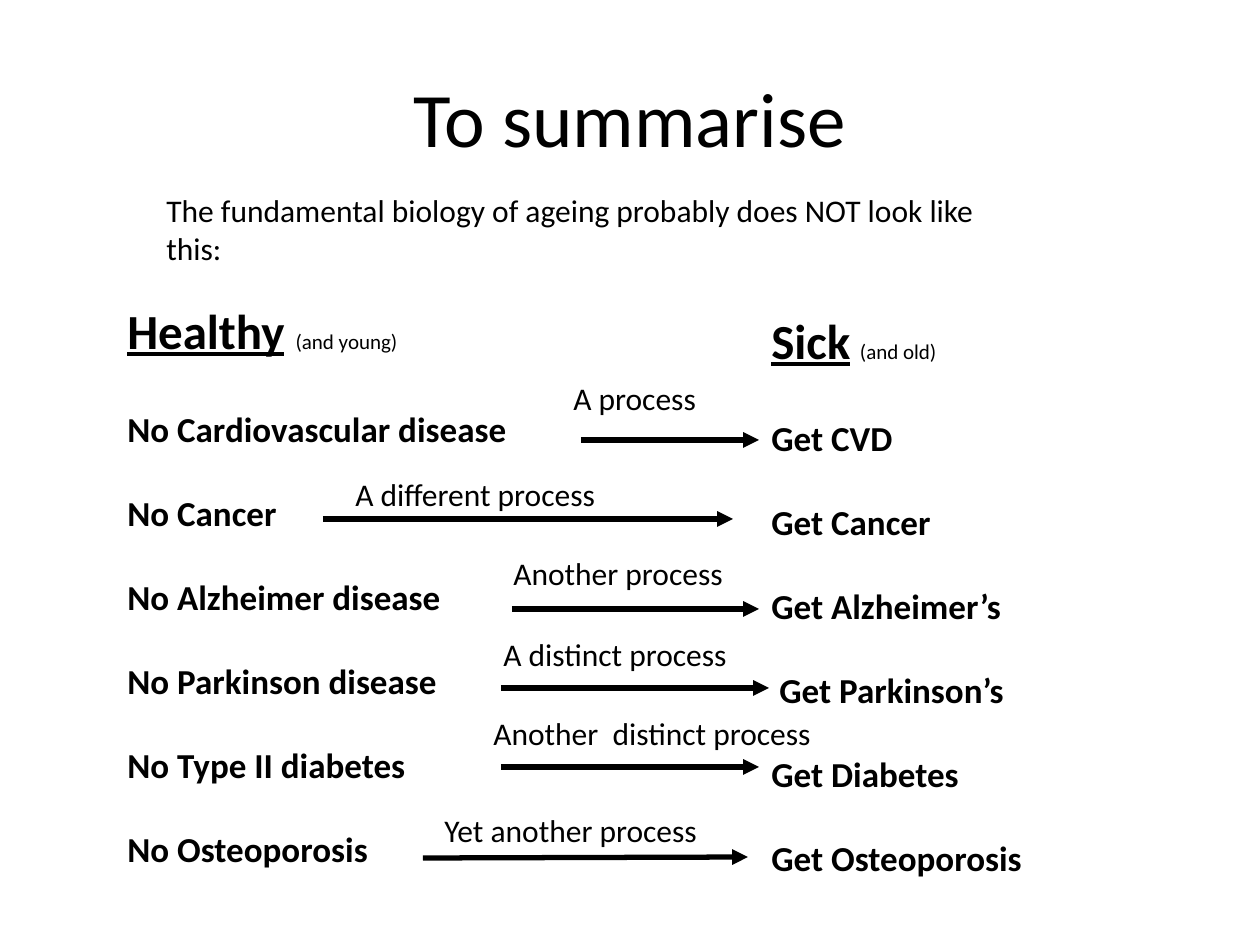
from dataclasses import dataclass

from lxml.etree import SubElement
from pptx import Presentation
from pptx.dml.color import RGBColor
from pptx.enum.shapes import MSO_CONNECTOR
from pptx.enum.text import MSO_ANCHOR, PP_ALIGN
from pptx.oxml.ns import qn
from pptx.util import Pt

EMU_PER_PX = 914400 / 126


@dataclass(frozen=True)
class Theme:
    font: str = "Calibri"
    ink: RGBColor = RGBColor(0, 0, 0)
    title: int = 44
    heading: int = 28
    gap: int = 24
    item: int = 20
    body: int = 18
    aside: int = 12
    arrow: int = 3


THEME = Theme()

# Healthy state, sick state
STATES = [
    ("No Cardiovascular disease", "Get CVD"),
    ("No Cancer", "Get Cancer"),
    ("No Alzheimer disease", "Get Alzheimer’s"),
    ("No Parkinson disease", " Get Parkinson’s"),
    ("No Type II diabetes", "Get Diabetes"),
    ("No Osteoporosis", "Get Osteoporosis"),
]

# Label, its left, top and width, then the arrow's start and end
PROCESSES = [
    ("A process", 561, 373, 189, (581, 440), (759, 440)),
    ("A different process", 343, 469, 367, (323, 519), (733, 519)),
    ("Another process", 501, 548, 287, (512, 609), (759, 609)),
    ("A distinct process", 491, 629, 328, (501, 688), (769, 688)),
    ("Another  distinct process", 481, 708, 417, (501, 767), (759, 767)),
    ("Yet another process", 432, 805, 397, (423, 858), (748, 857)),
]


def px(value):
    return round(value * EMU_PER_PX)


def format_span(span, size, bold=False, underline=False):
    font = span.font
    font.name, font.size, font.color.rgb = THEME.font, Pt(size), THEME.ink
    font.bold, font.underline = bold, underline


def add_text(page, left, top, width, height, text, size, bold=False):
    """Add a wrapped text box; each line of text becomes a paragraph."""
    box = page.shapes.add_textbox(px(left), px(top), px(width), px(height))
    frame = box.text_frame
    frame.word_wrap = True
    frame.text = text
    for para in frame.paragraphs:
        for span in para.runs:
            format_span(span, size, bold)
    return frame


def add_title(page, text):
    frame = add_text(page, 63, 38, 1134, 158, text, THEME.title)
    frame.vertical_anchor = MSO_ANCHOR.MIDDLE
    frame.paragraphs[0].alignment = PP_ALIGN.CENTER


def add_heading(page, left, top, width, word, aside, gap_size):
    frame = add_text(page, left, top, width, 72, word, THEME.heading)
    para = frame.paragraphs[0]
    format_span(para.runs[0], THEME.heading, bold=True, underline=True)
    for text, size in ((" ", gap_size), (aside, THEME.aside)):
        span = para.add_run()
        span.text = text
        format_span(span, size)


def add_state_list(page, left, top, width, states):
    frame = add_text(page, left, top, width, 479, "\n".join(states), THEME.item, bold=True)
    for para in frame.paragraphs[1:]:
        para.space_before = Pt(THEME.gap)


def add_arrow(page, start, end):
    arrow = page.shapes.add_connector(
        MSO_CONNECTOR.STRAIGHT, *(px(value) for value in start + end))
    arrow.line.color.rgb = THEME.ink
    arrow.line.width = Pt(THEME.arrow)
    SubElement(arrow.line._get_or_add_ln(), qn("a:tailEnd"), type="triangle")
    SubElement(arrow._element.spPr, qn("a:effectLst"))


def main():
    deck = Presentation()
    deck.slide_width, deck.slide_height = px(1260), px(945)
    page = deck.slides.add_slide(deck.slide_layouts[6])

    add_title(page, "To summarise")
    add_text(page, 154, 185, 833, 89,
             "The fundamental biology of ageing probably does NOT look like this:",
             THEME.body)

    healthy, sick = zip(*STATES)
    add_heading(page, 115, 294, 515, "Healthy", "(and young)", THEME.heading)
    add_state_list(page, 115, 401, 518, healthy)
    add_heading(page, 759, 304, 377, "Sick", "(and old)", THEME.gap)
    add_state_list(page, 759, 410, 349, sick)

    for label, left, top, width, start, end in PROCESSES:
        add_arrow(page, start, end)
        add_text(page, left, top, width, 50, label, THEME.body)

    deck.save("out.pptx")


if __name__ == "__main__":
    main()
